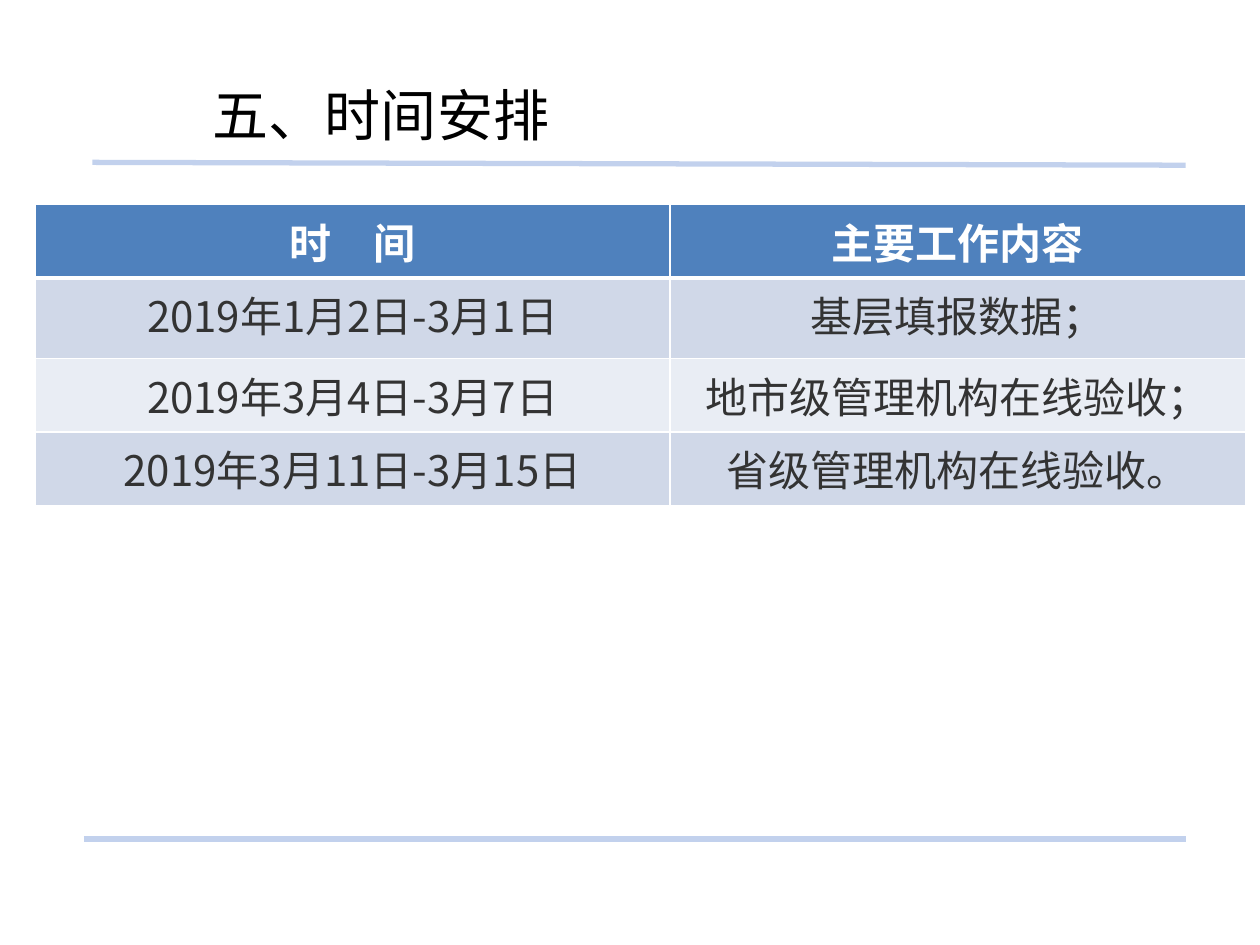
from lxml.etree import SubElement
from pptx import Presentation
from pptx.dml.color import RGBColor
from pptx.enum.shapes import MSO_CONNECTOR as Conn
from pptx.enum.text import MSO_ANCHOR as Anchor, PP_ALIGN as Align
from pptx.oxml.ns import qn
from pptx.util import Pt

COLORS = {"rule": "C2D1ED", "header": "4F81BD", "odd": "D0D8E8", "even": "E9EDF4",
          "white": "FFFFFF", "black": "000000", "text": "333333"}
CJK = "Noto Sans CJK SC"
FORMATS = {
    "title": {"size": Pt(32), "bold": False, "name": CJK},
    "header": {"size": Pt(24), "bold": True, "name": "Calibri"},
    "body": {"size": Pt(24), "bold": False, "name": CJK},
}


def rgb(name):
    return RGBColor.from_string(COLORS[name])


class SlideBuilder:
    """Holds the style and the current slide."""

    def __init__(self, prs):
        self.s = prs.slides.add_slide(prs.slide_layouts[5])

    def add_text(self, tf, text, style, color, align):
        p = tf.paragraphs[0]
        p.alignment = align
        r = p.add_run()
        r.text = text
        for key, value in FORMATS[style].items():
            setattr(r.font, key, value)
        r.font.color.rgb = rgb(color)
        SubElement(r.font._element, qn("a:ea"), typeface=CJK)

    def title(self, text, left, top, width, height):
        sp = self.s.shapes.title
        sp.left, sp.top, sp.width, sp.height = map(Pt, (left, top, width, height))
        tf = sp.text_frame
        tf.vertical_anchor = Anchor.TOP
        self.add_text(tf, text, "title", "black", Align.LEFT)

    def rule(self, x1, y1, x2, y2):
        line = self.s.shapes.add_connector(Conn.STRAIGHT, *map(Pt, (x1, y1, x2, y2)))
        line.line.width = Pt(3)
        line.line.color.rgb = rgb("rule")
        SubElement(line._element.spPr, qn("a:effectLst"))

    def borders(self, cell, top, bottom):
        """Draw white cell borders, 1 pt wide at the sides."""
        tcPr = cell._tc.get_or_add_tcPr()
        widths = {"lnL": 1, "lnR": 1, "lnT": top, "lnB": bottom}
        for i, (tag, width) in enumerate(widths.items()):
            ln = SubElement(tcPr, qn(f"a:{tag}"), w=str(Pt(width)))
            fill = SubElement(ln, qn("a:solidFill"))
            SubElement(fill, qn("a:srgbClr"), val=COLORS["white"])
            tcPr.insert(i, ln)

    def table(self, left, top, widths, heights, rows):
        box = map(Pt, (left, top, sum(widths), sum(heights)))
        table = self.s.shapes.add_table(len(rows), len(widths), *box).table
        for col, width in zip(table.columns, widths):
            col.width = Pt(width)
        for i, (row, height, texts) in enumerate(zip(table.rows, heights, rows)):
            row.height = Pt(height)
            style, color = ("body", "text") if i else ("header", "white")
            fill = ("odd" if i % 2 else "even") if i else "header"
            for cell, text in zip(row.cells, texts):
                cell.fill.solid()
                cell.fill.fore_color.rgb = rgb(fill)
                self.borders(cell, 3 if i == 1 else 1, 3 if i == 0 else 1)
                self.add_text(cell.text_frame, text, style, color, Align.CENTER)


def main():
    prs = Presentation()
    prs.slide_width, prs.slide_height = Pt(720), Pt(540)
    slide = SlideBuilder(prs)
    slide.rule(52.8, 92.8, 677.5, 94.4)
    slide.rule(48, 479.5, 677.5, 479.5)
    slide.title("五、时间安排", 114.5, 42.5, 563, 46)
    slide.table(20.2, 116.8, (362.6, 329), (39.5, 46, 39.5, 39.5), [
        ("时　间", "主要工作内容"),
        ("2019年1月2日-3月1日", "基层填报数据；"),
        ("2019年3月4日-3月7日", "地市级管理机构在线验收；"),
        ("2019年3月11日-3月15日", "省级管理机构在线验收。"),
    ])
    prs.save("out.pptx")


if __name__ == "__main__":
    main()
